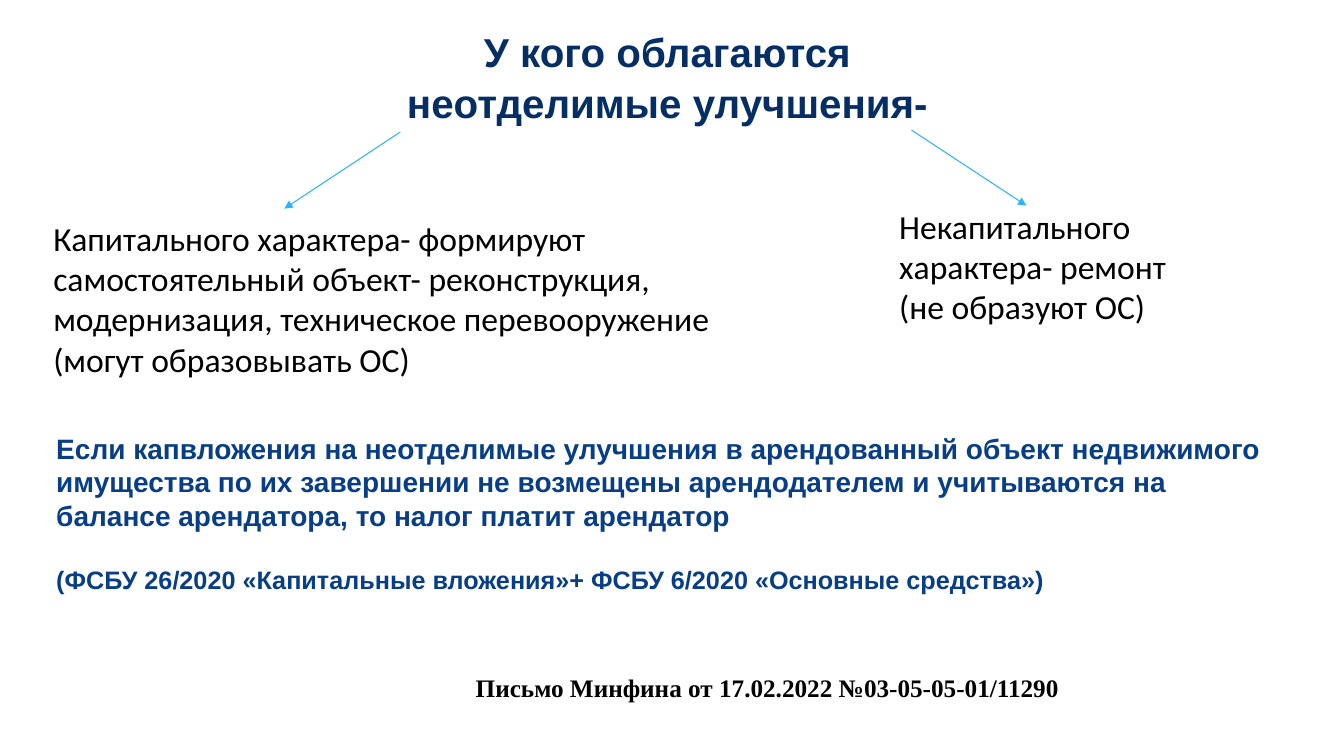
from lxml.etree import SubElement
from pptx import Presentation
from pptx.dml.color import RGBColor
from pptx.enum.shapes import MSO_CONNECTOR
from pptx.enum.text import MSO_ANCHOR, MSO_AUTO_SIZE, PP_ALIGN
from pptx.oxml.ns import qn
from pptx.util import Inches, Pt


def color(code):
    return RGBColor.from_string(code)


class Board:
    """Holds the style and the current slide."""
    navy, blue, sky, black = "052E65", "073E87", "2BB4FC", "000000"
    head, body, note = "Arial", "Calibri", "Times New Roman"

    def __init__(self, deck):
        self.slide = deck.slides.add_slide(deck.slide_layouts[5])

    def style(self, par, size, face, code, bold):
        font = par.font
        font.size, font.name, font.bold = Pt(size), face, bold
        font.color.rgb = color(code)

    def title(self, text, box, size):
        shape = self.slide.shapes.title
        shape.left, shape.top, shape.width, shape.height = map(Inches, box)
        frame = shape.text_frame
        frame.text = text
        frame.word_wrap = True
        frame.auto_size = MSO_AUTO_SIZE.NONE
        frame.vertical_anchor = MSO_ANCHOR.MIDDLE
        frame.margin_bottom = Inches(0.49)
        par = frame.paragraphs[0]
        par.alignment = PP_ALIGN.CENTER
        par.line_spacing = 1.06
        self.style(par, size, self.head, self.navy, True)

    def text(self, box, lines, face, code, bold=False, gap=0):
        """Lines are pairs of text and size; gap parts them in points."""
        frame = self.slide.shapes.add_textbox(*map(Inches, box)).text_frame
        frame.word_wrap = True
        frame.auto_size = MSO_AUTO_SIZE.SHAPE_TO_FIT_TEXT
        for i, (words, size) in enumerate(lines):
            par = frame.add_paragraph() if i else frame.paragraphs[0]
            par.text = words
            par.space_before = Pt(gap if i else 0)
            self.style(par, size, face, code, bold)

    def arrow(self, start, end):
        line = self.slide.shapes.add_connector(
            MSO_CONNECTOR.STRAIGHT, *map(Inches, start + end))
        line.line.color.rgb = color(self.sky)
        line.line.width = Pt(0.75)
        SubElement(line.line._get_or_add_ln(), qn("a:tailEnd"), type="triangle")
        SubElement(line._element.spPr, qn("a:effectLst"))


def main():
    deck = Presentation()
    deck.slide_width, deck.slide_height = Inches(13.33), Inches(7.5)
    board = Board(deck)

    # Title and its two branches
    board.title("У кого облагаются\vнеотделимые улучшения-",
                (0.62, 0.34, 12, 1.25), 28.8)
    board.arrow((3.97, 1.31), (2.82, 2.07))
    board.arrow((9.04, 1.29), (10.18, 2.04))

    # Kinds of improvements
    board.text((0.43, 2.11, 7.49, 1.72), [
        ("Капитального характера- формируют самостоятельный объект- "
         "реконструкция, модернизация, техническое перевооружение", 24),
        ("(могут образовывать ОС)", 24),
    ], board.body, board.black)
    board.text((8.82, 1.99, 3.88, 1.31), [
        ("Некапитального характера- ремонт", 24),
        ("(не образуют ОС)", 24),
    ], board.body, board.black)

    # Rule and its standards
    board.text((0.46, 4.23, 12.33, 1.75), [
        ("Если капвложения на неотделимые улучшения в арендованный объект "
         "недвижимого имущества по их завершении не возмещены арендодателем "
         "и учитываются на балансе арендатора, то налог платит арендатор", 20),
        ("(ФСБУ 26/2020 «Капитальные вложения»+ "
         "ФСБУ 6/2020 «Основные средства»)", 18),
    ], board.head, board.blue, True, gap=23)

    # Reference letter
    board.text((4.62, 6.62, 8.4, 0.4), [
        ("Письмо Минфина от 17.02.2022 №03-05-05-01/11290", 18),
    ], board.note, board.black, True)

    deck.save("out.pptx")


if __name__ == "__main__":
    main()
